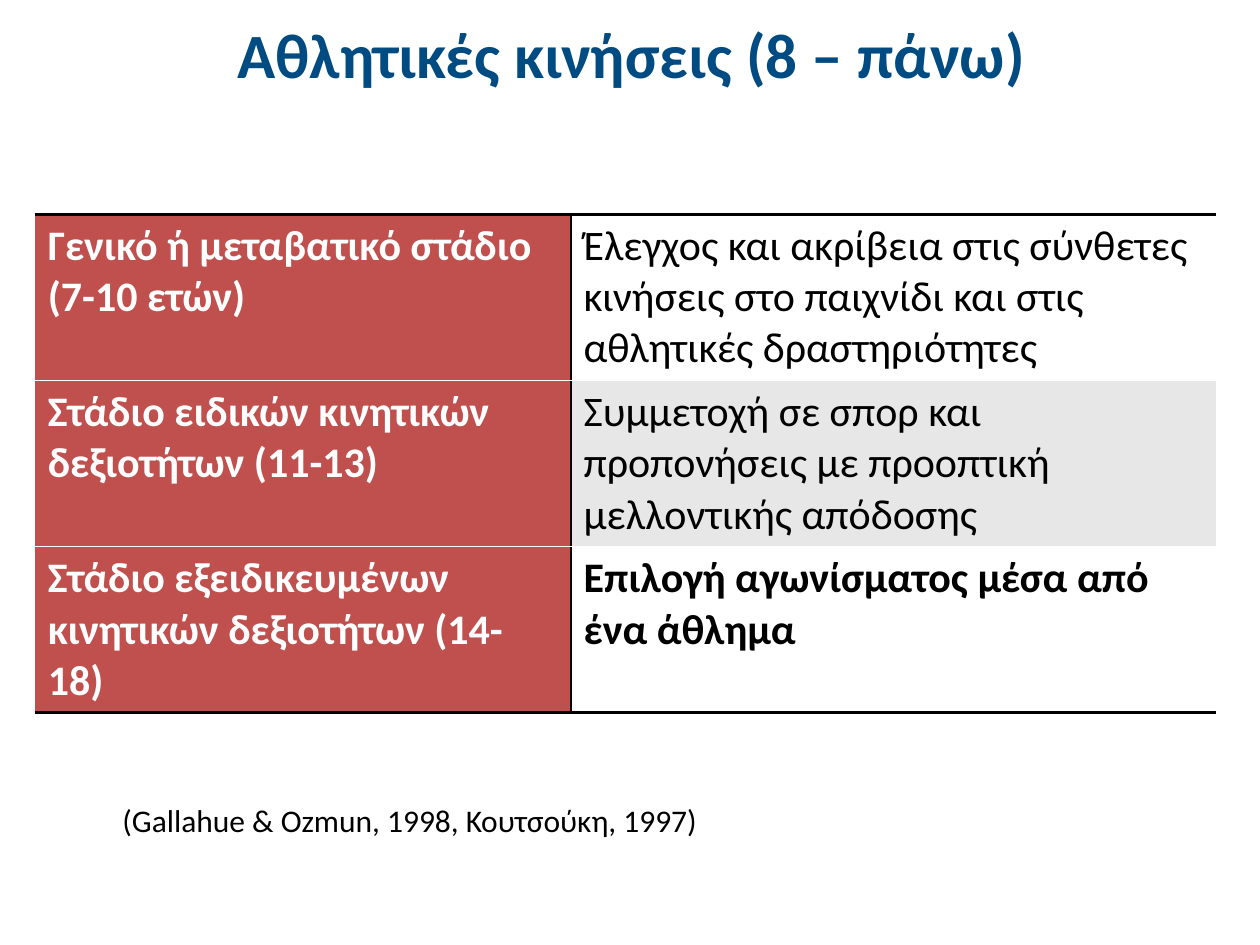
from dataclasses import dataclass
from typing import Any, NamedTuple

from lxml import etree
from pptx import Presentation
from pptx.dml.color import RGBColor
from pptx.enum import text
from pptx.oxml import ns
from pptx.util import Cm, Pt


@dataclass(frozen=True)
class Theme:
    face: str = "Calibri"
    blue: str = "004B82"
    red: str = "C0504D"
    grey: str = "E7E7E7"
    black: str = "000000"
    white: str = "FFFFFF"
    head: int = 36
    tab: int = 32
    cell: int = 24
    note: int = 18


class Box(NamedTuple):
    left: float
    top: float
    width: float
    height: float


class Stage(NamedTuple):
    name: str
    goal: str
    fill: str
    bold: bool = False


class Edge(NamedTuple):
    side: str
    tint: str
    width: float


THEME = Theme()
HEAD = Box(1.3, 0.31, 22.86, 2.5)
NOTE = Box(1.27, 15.52, 22.86, 1.8)
GRID = Box(0.71, 4.32, 23.8, 10.05)
COLS = (10.8, 13.0)
HANG = Cm(0.95)
STAGES = (
    Stage("Γενικό ή μεταβατικό στάδιο (7-10 ετών)",
          "Έλεγχος και ακρίβεια στις σύνθετες κινήσεις στο παιχνίδι "
          "και στις αθλητικές δραστηριότητες", THEME.white),
    Stage("Στάδιο ειδικών κινητικών δεξιοτήτων (11-13)",
          "Συμμετοχή σε σπορ και προπονήσεις με προοπτική "
          "μελλοντικής απόδοσης", THEME.grey),
    Stage("Στάδιο εξειδικευμένων κινητικών δεξιοτήτων (14-18)",
          "Επιλογή αγωνίσματος μέσα από ένα άθλημα", THEME.white, True),
)


def style(item: Any, **values: Any) -> None:
    for key, value in values.items():
        setattr(item, key, value)


def write(para: Any, words: str, size: int, tint: str, bold: bool) -> None:
    run = para.add_run()
    run.text = words
    style(run.font, name=THEME.face, size=Pt(size), bold=bold)
    run.font.color.rgb = RGBColor.from_string(tint)


def frame(slide: Any, box: Box) -> Any:
    body = slide.shapes.add_textbox(*map(Cm, box)).text_frame
    style(body, word_wrap=True, vertical_anchor=text.MSO_ANCHOR.TOP)
    return body


def rule(cell: Any, edge: Edge) -> None:
    """Draw one cell border; zero width means no line."""
    line = etree.SubElement(cell._tc.get_or_add_tcPr(),
                            ns.qn(f"a:ln{edge.side}"), w=str(Pt(edge.width)))
    if edge.width:
        fill = etree.SubElement(line, ns.qn("a:solidFill"))
        etree.SubElement(fill, ns.qn("a:srgbClr"), val=edge.tint)
    else:
        etree.SubElement(line, ns.qn("a:noFill"))


def edges(row: int, col: int) -> list[Edge]:
    """List borders in the order the file format asks for."""
    def flat(side: str, outer: bool) -> Edge:
        return Edge(side, THEME.black, 2) if outer else Edge(side, THEME.white, 1)

    return [
        Edge("L", THEME.black, col),
        Edge("R", THEME.black, 1 - col),
        flat("T", row == 0),
        flat("B", row == len(STAGES) - 1),
    ]


def fill_cell(cell: Any, words: str, fill: str, tint: str, bold: bool) -> None:
    write(cell.text_frame.paragraphs[0], words, THEME.cell, tint, bold)
    cell.fill.solid()
    cell.fill.fore_color.rgb = RGBColor.from_string(fill)


def draw_head(slide: Any) -> None:
    body = frame(slide, HEAD)
    body.margin_top = 0
    para = body.paragraphs[0]
    para.alignment = text.PP_ALIGN.CENTER
    write(para, "Αθλητικές κινήσεις (8 – πάνω)", THEME.head, THEME.blue, True)


def draw_grid(slide: Any) -> None:
    table = slide.shapes.add_table(len(STAGES), len(COLS), *map(Cm, GRID)).table
    style(table, first_row=False, horz_banding=False)
    for col, width in zip(table.columns, COLS):
        col.width = Cm(width)
    for row, stage in enumerate(STAGES):
        table.rows[row].height = Cm(GRID.height / len(STAGES))
        for col in range(len(COLS)):
            for edge in edges(row, col):
                rule(table.cell(row, col), edge)
        fill_cell(table.cell(row, 0), stage.name, THEME.red, THEME.white, True)
        fill_cell(table.cell(row, 1), stage.goal, stage.fill, THEME.black,
                  stage.bold)


def draw_note(slide: Any) -> None:
    para = frame(slide, NOTE).paragraphs[0]
    props = para._p.get_or_add_pPr()
    props.set("marL", str(HANG))
    props.set("indent", str(-HANG))
    write(para, "\t", THEME.tab, THEME.black, True)
    write(para, "(Gallahue & Ozmun, 1998, Κουτσούκη, 1997)", THEME.note,
          THEME.black, False)


def main() -> None:
    deck = Presentation()
    style(deck, slide_width=Cm(25.4), slide_height=Cm(19.05))
    slide = deck.slides.add_slide(deck.slide_layouts[6])
    for draw in (draw_head, draw_note, draw_grid):
        draw(slide)
    deck.save("out.pptx")


if __name__ == "__main__":
    main()
